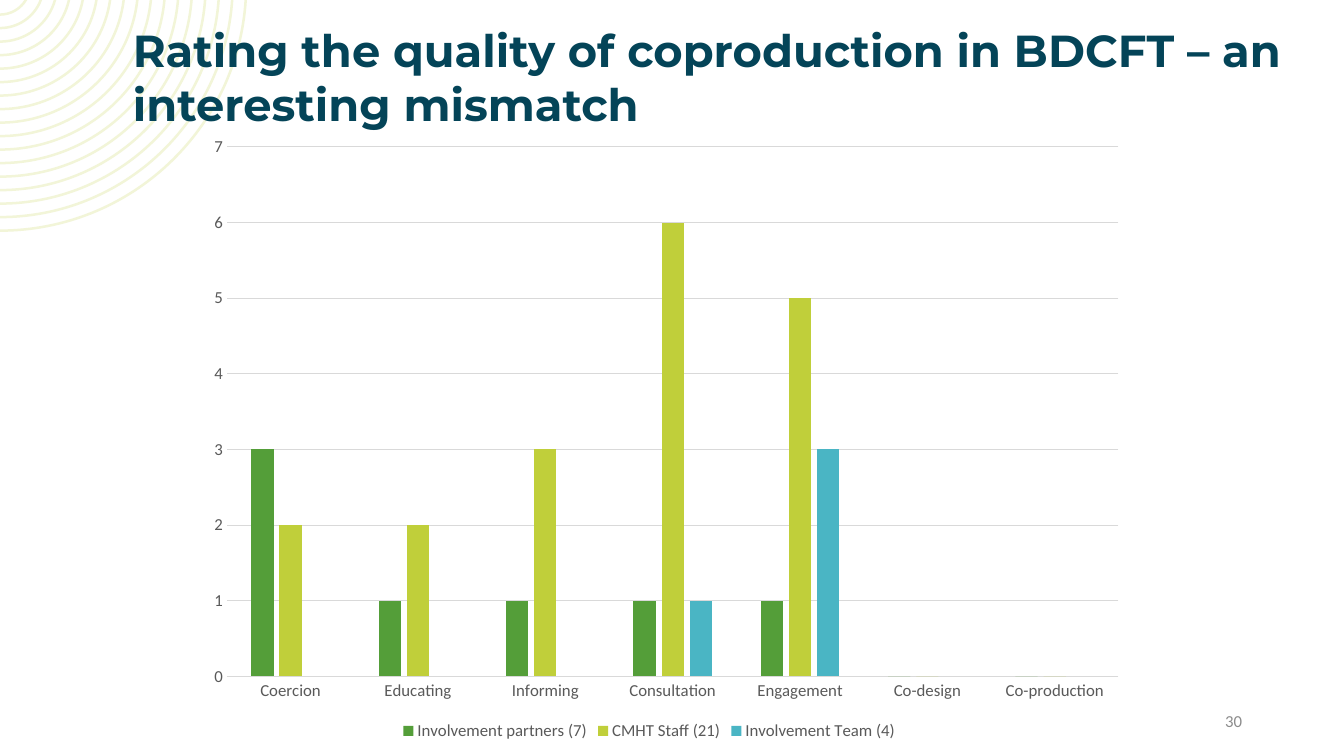
from math import asin, cos, pi, sin, tan

from lxml.etree import SubElement
from pptx import Presentation
from pptx.chart.data import CategoryChartData
from pptx.dml.color import RGBColor
from pptx.enum.chart import XL_CHART_TYPE as ChartType, XL_LEGEND_POSITION as LegendPosition
from pptx.enum.chart import XL_TICK_MARK as TickMark
from pptx.enum.text import MSO_ANCHOR as Anchor, PP_ALIGN as Align
from pptx.oxml.ns import qn
from pptx.util import Pt

PX = 914400 / 100.8
COLORS = {
    "rings": "F2F5D8", "title": "044458", "number": "8C8C8C",
    "label": "595959", "grid": "D9D9D9",
    "partners": "549E39", "staff": "C0CF3A", "team": "4AB5C4",
}


def px(value):
    return round(value * PX)


def add_text(text, left, top, width, height, font, size, color, bold=False, align=Align.LEFT):
    box = slide.shapes.add_textbox(px(left), px(top), px(width), px(height))
    frame = box.text_frame
    frame.word_wrap = True
    frame.vertical_anchor = Anchor.MIDDLE
    paragraph = frame.paragraphs[0]
    paragraph.text = text
    paragraph.alignment = align
    paragraph.font.name = font
    paragraph.font.size = Pt(size)
    paragraph.font.bold = bold
    paragraph.font.color.rgb = RGBColor.from_string(COLORS[color])


presentation = Presentation()
presentation.slide_width = px(1344)
presentation.slide_height = px(756)
slide = presentation.slides.add_slide(presentation.slide_layouts[6])

RING_COUNT, RING_STEP, RING_WIDTH = 17, 13.5, 2.5
OUTER_RADIUS, CENTER_ABOVE = 247.5, 15.6
builder = None
for ring in range(RING_COUNT):
    outer = OUTER_RADIUS - ring * RING_STEP
    arcs = []
    for radius in (outer, outer - RING_WIDTH):
        start = asin(CENTER_ABOVE / radius)
        handle = radius * 4 / 3 * tan((pi / 2 - start) / 4)
        x, y = radius * cos(start), 0
        bottom = radius - CENTER_ABOVE
        curve = [(x, y), (x - handle * sin(start), handle * cos(start)), (handle, bottom), (0, bottom)]
        arcs.append([(px(across), px(down)) for across, down in curve])
    outline = arcs[0] + arcs[1][::-1]
    if builder is None:
        builder = slide.shapes.build_freeform(*outline[0])
    else:
        builder.move_to(*outline[0])
    builder.add_line_segments(outline[1:], close=True)
rings = builder.convert_to_shape()
rings.shadow.inherit = False
rings.fill.solid()
rings.fill.fore_color.rgb = RGBColor.from_string(COLORS["rings"])
rings.line.fill.background()

segments = list(rings._element.iter(qn("a:lnTo")))
for first in range(0, len(segments), 7):
    for begin in (first, first + 4):
        curve, *others = segments[begin:begin + 3]
        curve.tag = qn("a:cubicBezTo")
        for segment in others:
            curve.append(segment[0])
            segment.getparent().remove(segment)

add_text("Rating the quality of coproduction in BDCFT – an interesting mismatch",
         123, 34, 1176, 85, "Montserrat", 32, "title", bold=True)
add_text("30", 950, 701, 302, 40, "Calibri", 12, "number", align=Align.RIGHT)

data = CategoryChartData()
data.categories = ["Coercion", "Educating", "Informing", "Consultation",
                   "Engagement", "Co-design", "Co-production"]
data.add_series("Involvement partners (7)", [3, 1, 1, 1, 1, 0, 0])
data.add_series("CMHT Staff (21)", [2, 2, 3, 6, 5, 0, 0])
data.add_series("Involvement Team (4)", [None, None, None, 1, 3, None, None])
chart = slide.shapes.add_chart(ChartType.COLUMN_CLUSTERED, px(180), px(122), px(939), px(623), data).chart
chart.has_title = False
chart.font.name = "Calibri"
chart.font.size = Pt(12)
chart.font.color.rgb = RGBColor.from_string(COLORS["label"])
chart.has_legend = True
chart.legend.position = LegendPosition.BOTTOM
chart.legend.include_in_layout = False

plot = chart.plots[0]
plot.gap_width = 219
plot.overlap = -27
plot.vary_by_categories = False
for series, name in zip(plot.series, ("partners", "staff", "team")):
    series.format.fill.solid()
    series.format.fill.fore_color.rgb = RGBColor.from_string(COLORS[name])
    series.invert_if_negative = False

category_axis, value_axis = chart.category_axis, chart.value_axis
value_axis.minimum_scale = 0
value_axis.maximum_scale = 7
value_axis.major_unit = 1
value_axis.has_major_gridlines = True
for axis in (category_axis, value_axis):
    axis.major_tick_mark = TickMark.NONE
    axis.minor_tick_mark = TickMark.NONE
for line in (category_axis.format.line, value_axis.major_gridlines.format.line):
    line.color.rgb = RGBColor.from_string(COLORS["grid"])
    line.width = Pt(0.75)
value_axis.format.line.fill.background()

plot_area = category_axis._element.getparent()
layout = plot_area.find(qn("c:layout"))
if layout is None:
    layout = SubElement(plot_area, qn("c:layout"))
    plot_area.insert(0, layout)
manual = SubElement(layout, qn("c:manualLayout"))
for tag, value in (("layoutTarget", "inner"), ("xMode", "edge"), ("yMode", "edge"),
                   ("x", 0.05), ("y", 0.04), ("w", 0.95), ("h", 0.85)):
    SubElement(manual, qn(f"c:{tag}")).set("val", str(value))

presentation.save("out.pptx")
